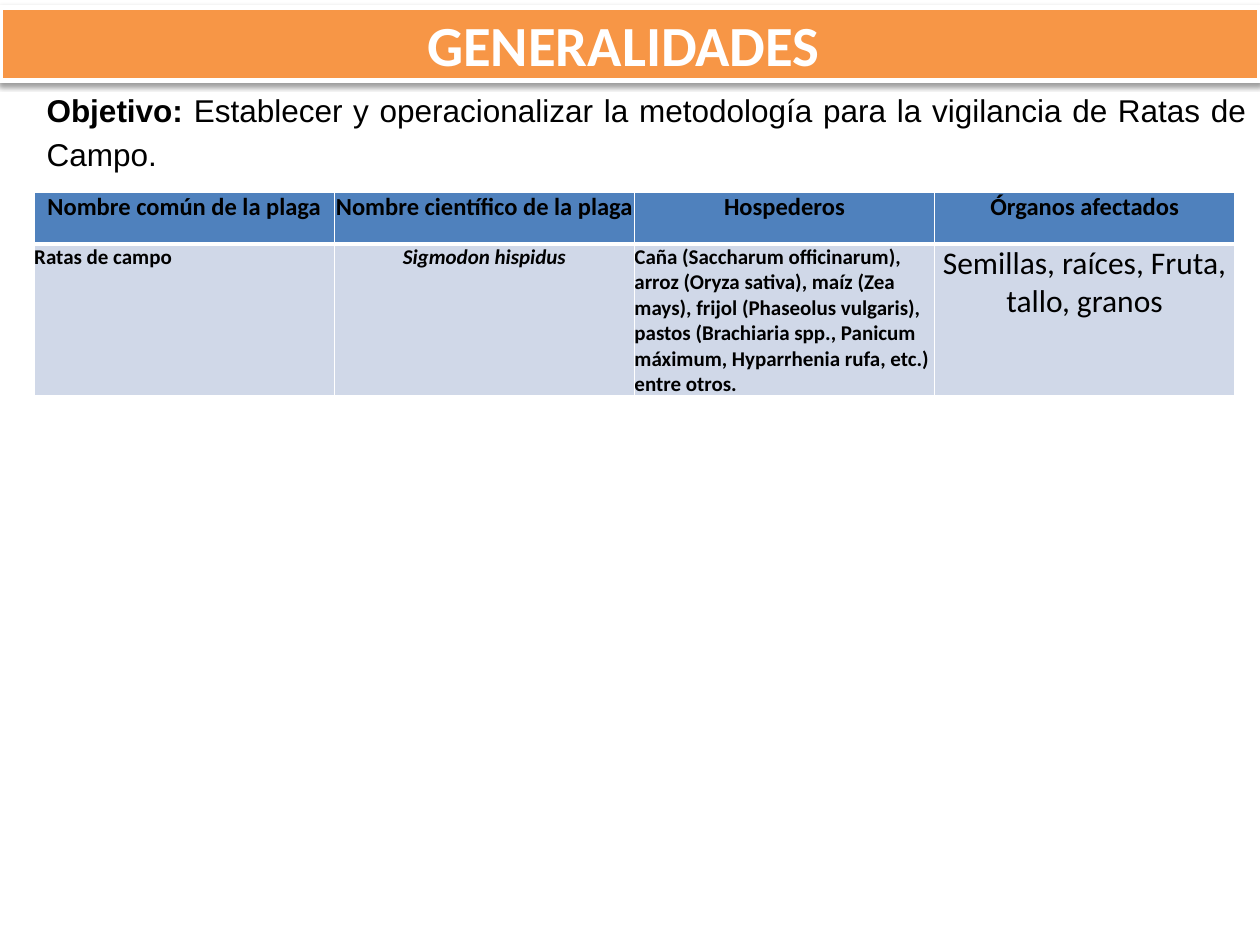
from dataclasses import dataclass

from lxml import etree
from pptx import Presentation
from pptx.dml.color import RGBColor
from pptx.enum.shapes import MSO_SHAPE
from pptx.enum.text import MSO_ANCHOR, MSO_AUTO_SIZE, PP_ALIGN
from pptx.oxml.ns import qn
from pptx.util import Cm, Pt

RECTANGLE = MSO_SHAPE.RECTANGLE
MIDDLE = MSO_ANCHOR.MIDDLE
GROW = MSO_AUTO_SIZE.SHAPE_TO_FIT_TEXT
LEFT, CENTER, JUSTIFY = PP_ALIGN.LEFT, PP_ALIGN.CENTER, PP_ALIGN.JUSTIFY


@dataclass(frozen=True)
class Theme:
    banner: str = "F79646"
    header: str = "4F81BD"
    body: str = "D0D8E8"
    white: str = "FFFFFF"
    black: str = "000000"
    heading_font: str = "Calibri"
    text_font: str = "Arial"
    title_size: float = 32.4
    text_size: float = 18
    header_size: float = 14
    cell_size: float = 12


class PestSlide:
    def __init__(self, slide, theme):
        self.slide = slide
        self.theme = theme

    def add_run(self, paragraph, text, size, font, color, bold=False, italic=False):
        run = paragraph.add_run()
        run.text = text
        run.font.size = Pt(size)
        run.font.name = font
        run.font.bold = bold
        run.font.italic = italic
        run.font.color.rgb = RGBColor.from_string(color)

    def add_shadow(self, shape):
        effects = etree.SubElement(shape._element.spPr, qn("a:effectLst"))
        shadow = etree.SubElement(
            effects, qn("a:outerShdw"), blurRad=str(Pt(3.1)), dist=str(Pt(1.6)),
            dir="5400000", rotWithShape="0")
        color = etree.SubElement(shadow, qn("a:srgbClr"), val=self.theme.black)
        etree.SubElement(color, qn("a:alpha"), val="38000")

    def add_banner(self, text, left, top, width, height):
        theme = self.theme
        banner = self.slide.shapes.add_shape(
            RECTANGLE, Cm(left), Cm(top), Cm(width), Cm(height))
        banner.fill.solid()
        banner.fill.fore_color.rgb = RGBColor.from_string(theme.banner)
        banner.line.color.rgb = RGBColor.from_string(theme.white)
        banner.line.width = Pt(3)
        self.add_shadow(banner)
        banner.text_frame.vertical_anchor = MIDDLE
        title = banner.text_frame.paragraphs[0]
        title.alignment = CENTER
        self.add_run(title, text, theme.title_size, theme.heading_font,
                     theme.white, bold=True)

    def add_statement(self, label, text, left, top, width, height):
        theme = self.theme
        frame = self.slide.shapes.add_textbox(
            Cm(left), Cm(top), Cm(width), Cm(height)).text_frame
        frame.word_wrap = True
        frame.auto_size = GROW
        statement = frame.paragraphs[0]
        statement.alignment = JUSTIFY
        statement.line_spacing = 1.15
        for words, bold in ((label, True), (text, False)):
            self.add_run(statement, words, theme.text_size, theme.text_font,
                         theme.black, bold)

    def add_borders(self, cell, bottom_width):
        properties = cell._tc.get_or_add_tcPr()
        widths = {"a:lnL": 1, "a:lnR": 1, "a:lnT": 1, "a:lnB": bottom_width}
        for side, width in widths.items():
            border = etree.SubElement(properties, qn(side), w=str(Pt(width)))
            fill = etree.SubElement(border, qn("a:solidFill"))
            etree.SubElement(fill, qn("a:srgbClr"), val=self.theme.white)

    def fill_cell(self, cell, text, fill, size, align=CENTER, bold=True,
                  italic=False, bottom_width=1):
        cell.margin_left = cell.margin_right = 0
        cell.margin_top = cell.margin_bottom = 0
        self.add_borders(cell, bottom_width)
        cell.fill.solid()
        cell.fill.fore_color.rgb = RGBColor.from_string(fill)
        paragraph = cell.text_frame.paragraphs[0]
        paragraph.alignment = align
        self.add_run(paragraph, text, size, self.theme.heading_font,
                     self.theme.black, bold, italic)

    def add_pest_table(self, headings, details, left, top, width, row_heights):
        theme = self.theme
        table = self.slide.shapes.add_table(
            len(row_heights), len(headings), Cm(left), Cm(top),
            Cm(width), Cm(sum(row_heights))).table
        table.first_row = table.horz_banding = False
        for row, height in zip(table.rows, row_heights):
            row.height = Cm(height)
        for column, (heading, detail) in enumerate(zip(headings, details)):
            text, style = detail
            self.fill_cell(table.cell(0, column), heading, theme.header,
                           theme.header_size, bottom_width=3)
            self.fill_cell(table.cell(1, column), text, theme.body, **style)


def main():
    theme = Theme()
    presentation = Presentation()
    presentation.slide_width, presentation.slide_height = Cm(25.4), Cm(19.05)
    page = PestSlide(
        presentation.slides.add_slide(presentation.slide_layouts[6]), theme)

    # Title banner
    page.add_banner("GENERALIDADES ", 0, 0.15, 25.4, 1.47)

    # Objective
    page.add_statement(
        "Objetivo: ",
        "Establecer y operacionalizar la metodología para la vigilancia de "
        "Ratas de Campo.", 0.69, 1.6, 24.69, 2.03)

    # Pest, hosts and affected organs
    headings = ("Nombre común de la plaga", "Nombre científico de la plaga",
                "Hospederos", "Órganos afectados")
    hosts = ("Caña (Saccharum officinarum), arroz (Oryza sativa), maíz (Zea mays), "
             "frijol (Phaseolus vulgaris), pastos (Brachiaria spp., Panicum "
             "máximum, Hyparrhenia rufa, etc.) entre otros.")
    details = (
        ("Ratas de campo", {"size": theme.cell_size, "align": LEFT}),
        ("Sigmodon hispidus", {"size": theme.cell_size, "italic": True}),
        (hosts, {"size": theme.cell_size, "align": LEFT}),
        ("Semillas, raíces, Fruta, tallo, granos",
         {"size": theme.text_size, "bold": False}),
    )
    page.add_pest_table(headings, details, 0.69, 3.88, 24.2, (1.04, 3.05))

    presentation.save("out.pptx")


if __name__ == "__main__":
    main()
